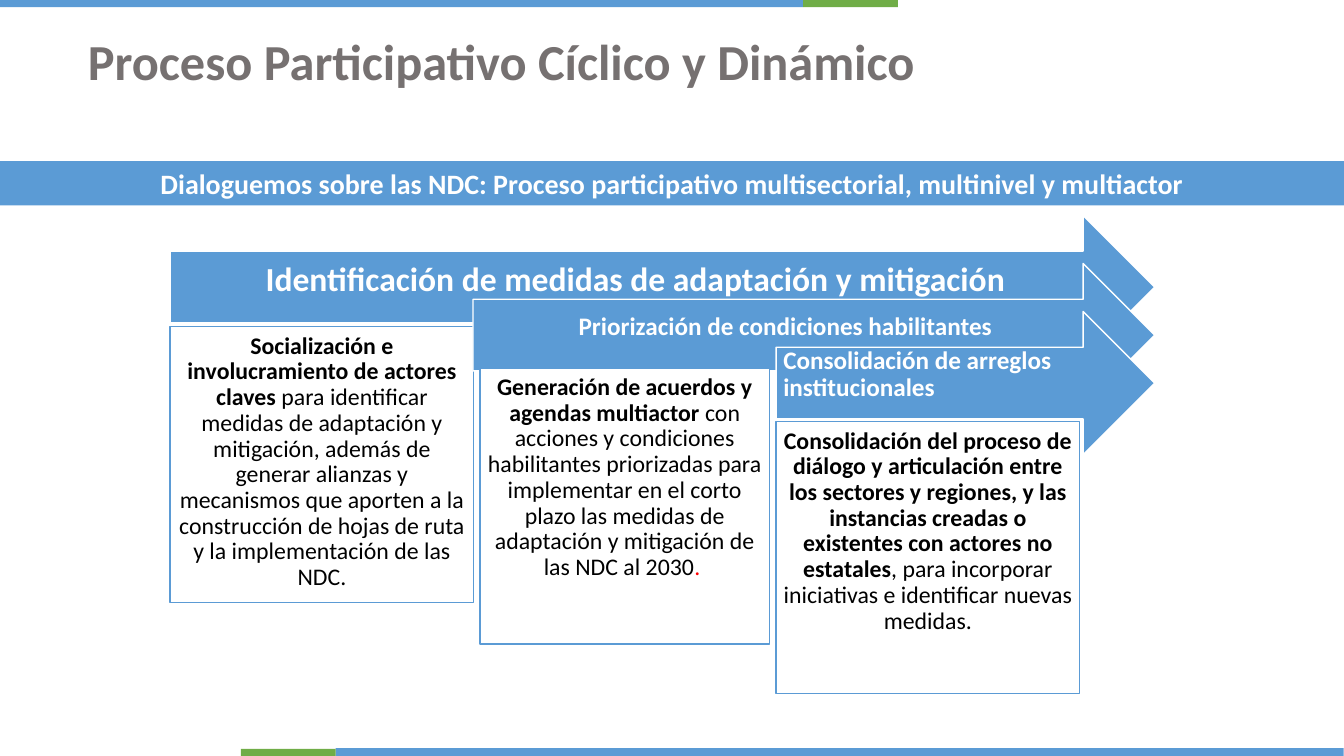
from pptx import Presentation, util as u
from pptx.dml.color import RGBColor
from pptx.enum import shapes, text

BLUE = RGBColor(0x5B, 0x9B, 0xD5)
GREEN = RGBColor(0x70, 0xAD, 0x47)
GRAY = RGBColor(0x76, 0x71, 0x71)
WHITE = RGBColor(0xFF, 0xFF, 0xFF)
BLACK = RGBColor(0, 0, 0)
RED = RGBColor(0xFF, 0, 0)

RECT = shapes.MSO_SHAPE.RECTANGLE
ARROW = shapes.MSO_SHAPE.RIGHT_ARROW
LEFT, MID = text.PP_ALIGN.LEFT, text.PP_ALIGN.CENTER
TOP, CENTER = text.MSO_ANCHOR.TOP, text.MSO_ANCHOR.MIDDLE

WIDE, HIGH = 33.87, 19.05
PAD = (0.25, 0.13, 0.25, 0.13)


class Deck:
    font = "Calibri"

    def __init__(self):
        self.prs = Presentation()
        self.prs.slide_width = u.Cm(WIDE)
        self.prs.slide_height = u.Cm(HIGH)
        self.slide = self.prs.slides.add_slide(self.prs.slide_layouts[5])

    def label(self, shape, runs, size, pad=PAD, align=MID, anchor=TOP, gap=1.0):
        """Fill a shape with runs of (words, colour, bold)."""
        frame = shape.text_frame
        frame.word_wrap = True
        frame.auto_size = text.MSO_AUTO_SIZE.NONE
        frame.vertical_anchor = anchor
        (frame.margin_left, frame.margin_top,
         frame.margin_right, frame.margin_bottom) = map(u.Cm, pad)
        para = frame.paragraphs[0]
        para.alignment = align
        para.line_spacing = gap
        for words, color, bold in runs:
            run = para.add_run()
            run.text = words
            run.font.name = self.font
            run.font.size = u.Pt(size)
            run.font.bold = bold
            run.font.color.rgb = color

    def title(self, words, at):
        shape = self.slide.shapes.title
        shape.left, shape.top, shape.width, shape.height = map(u.Cm, at)
        self.label(shape, [(words, GRAY, True)], 36)

    def block(self, kind, at, fill, line=None):
        shape = self.slide.shapes.add_shape(kind, *map(u.Cm, at))
        shape.shadow.inherit = False
        shape.fill.solid()
        shape.fill.fore_color.rgb = fill
        if line is None:
            shape.line.fill.background()
        else:
            shape.line.color.rgb = line
            shape.line.width = u.Pt(1)
        return shape

    def arrow(self, at, words, size, pad, align):
        shape = self.block(ARROW, at, BLUE, WHITE)
        self.label(shape, [(words, WHITE, True)], size, pad, align, CENTER, 0.9)

    def box(self, at, runs):
        shape = self.block(RECT, at, WHITE, BLUE)
        self.label(shape, runs, 17, (0.18,) * 4, gap=0.9)

    def band(self, at, words):
        shape = self.block(RECT, at, BLUE)
        self.label(shape, [(words, WHITE, True)], 20, anchor=CENTER)


# Stages: arrow (left, words, size, pad, align), then box (place, runs)
STAGES = [
    ((4.29, "Identificación de medidas de adaptación y mitigación",
      24, (0.25, 0.25, 0.71, 0.58), MID),
     ((4.29, 8.23, 7.65, 6.96), [
         ("Socialización e involucramiento de actores claves ", BLACK, True),
         ("para identificar medidas de adaptación y mitigación, además de "
          "generar alianzas y mecanismos que aporten a la construcción de "
          "hojas de ruta y la implementación de las NDC.", BLACK, False)])),
    ((11.92, "Priorización de condiciones habilitantes",
      18, (0.18, 0.18, 0.71, 0.58), MID),
     ((12.1, 9.27, 7.29, 6.96), [
         ("Generación de acuerdos y agendas multiactor ", BLACK, True),
         ("con acciones y condiciones habilitantes priorizadas para "
          "implementar en el corto plazo las medidas de adaptación y "
          "mitigación de las NDC al 2030", BLACK, False),
         (". ", RED, False)])),
    ((19.56, "Consolidación de arreglos institucionales",
      18, (0.18, 0.18, 0.71, 0.58), LEFT),
     ((19.56, 10.62, 7.65, 6.86), [
         ("Consolidación del proceso de diálogo y articulación entre los "
          "sectores y regiones, y las instancias creadas o existentes con "
          "actores no estatales", BLACK, True),
         (", para incorporar iniciativas e identificar nuevas medidas.",
          BLACK, False)])),
]
TIP, FIRST, STEP, TALL = 29.1, 5.43, 1.21, 3.61


def main():
    deck = Deck()

    # Edge stripes
    for at, fill in [((8.46, 18.85, 25.4, 0.2), BLUE),
                     ((6.07, 18.87, 2.39, 0.18), GREEN),
                     ((0, 0, 20.24, 0.18), BLUE),
                     ((20.24, 0, 2.39, 0.18), GREEN)]:
        deck.block(RECT, at, fill)

    deck.title("Proceso Participativo Cíclico y Dinámico",
               (1.12, 0.64, 23.04, 1.8))

    # Stepped arrows that share one tip, each with its box
    for i, ((left, *style), box) in enumerate(STAGES):
        deck.arrow((left, FIRST + i * STEP, TIP - left, TALL), *style)
        deck.box(*box)

    # Full-width band
    deck.band((0, 4.06, WIDE, 1.12),
              "Dialoguemos sobre las NDC: Proceso participativo "
              "multisectorial, multinivel y multiactor")

    deck.prs.save("out.pptx")


if __name__ == "__main__":
    main()
